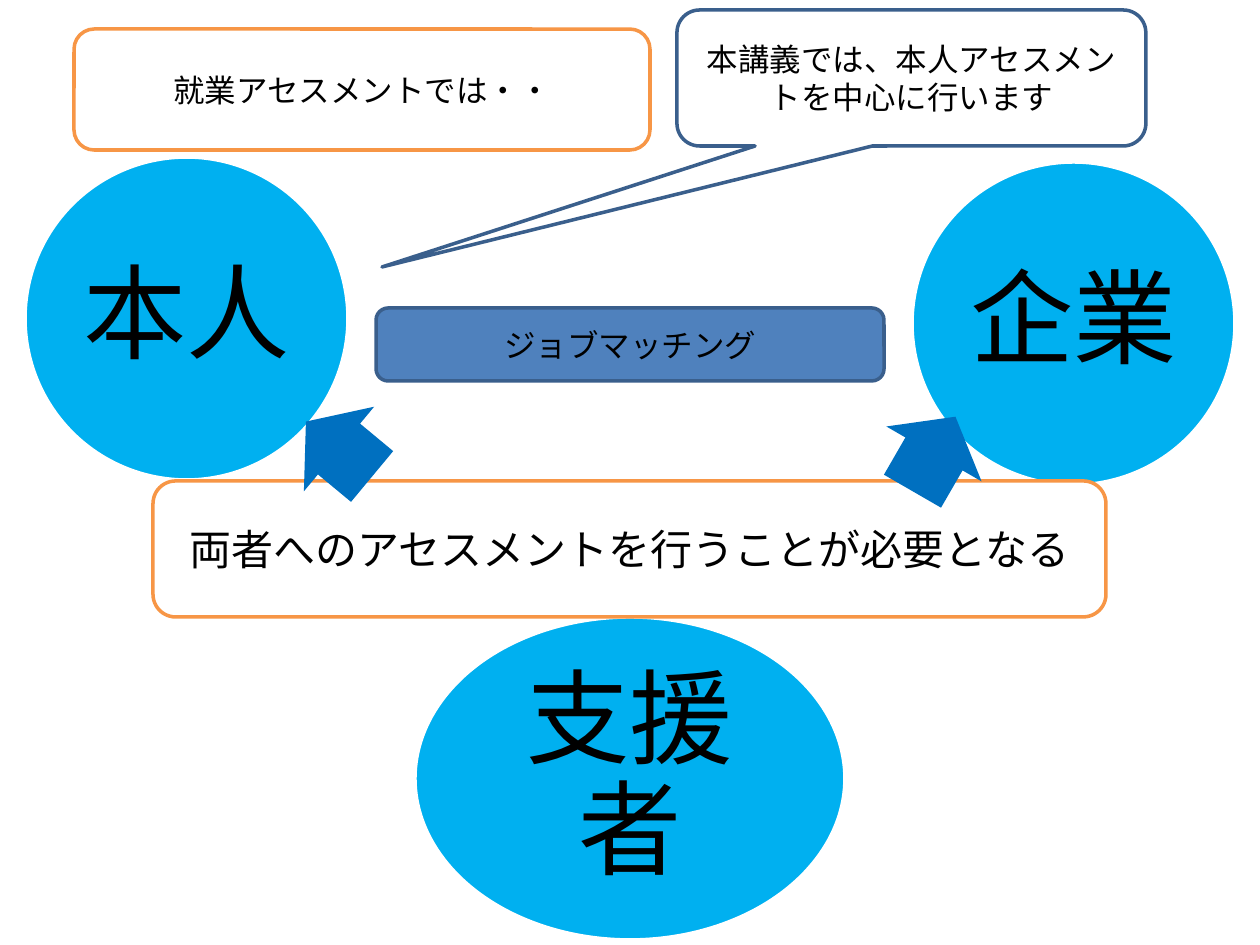
from lxml import etree
from pptx import Presentation
from pptx import util as u
from pptx.dml.color import RGBColor
from pptx.enum import shapes, text
from pptx.oxml.ns import qn

WHITE = RGBColor(0xFF, 0xFF, 0xFF)
BLACK = RGBColor(0, 0, 0)
SKY = RGBColor(0x00, 0xB0, 0xF0)
ARROW_BLUE = RGBColor(0x00, 0x70, 0xC0)
BAR_BLUE = RGBColor(0x4F, 0x81, 0xBD)
NAVY = RGBColor(0x3A, 0x5F, 0x8C)
ORANGE = RGBColor(0xF7, 0x96, 0x46)
JAPANESE = "Noto Sans CJK JP"
LATIN = "Calibri"
SCALE = 914400 / 126
Preset = shapes.MSO_SHAPE


def px(length):
    return u.Emu(round(length * SCALE))


class Diagram:
    def __init__(self, slide):
        self.slide = slide
        self.line_width = u.Pt(2)

    def shape(self, preset, box, fill=None, line=None):
        shape = self.slide.shapes.add_shape(preset, *map(px, box))
        shape.shadow.inherit = False
        if fill is None:
            shape.fill.background()
        else:
            shape.fill.solid()
            shape.fill.fore_color.rgb = fill
        if line is None:
            shape.line.fill.background()
        else:
            shape.line.color.rgb = line
            shape.line.width = self.line_width
        return shape

    def label(self, shape, wording, size, font=JAPANESE):
        frame = shape.text_frame
        frame.word_wrap = True
        frame.vertical_anchor = text.MSO_ANCHOR.MIDDLE
        paragraph = frame.paragraphs[0]
        paragraph.text = wording
        paragraph.alignment = text.PP_ALIGN.CENTER
        paragraph.font.size = u.Pt(size)
        paragraph.font.color.rgb = BLACK
        paragraph.font.name = font
        defaults = paragraph._p.pPr.find(qn("a:defRPr"))
        etree.SubElement(defaults, qn("a:ea"), typeface=JAPANESE)
        return paragraph

    def party(self, wording, box):
        shape = self.shape(Preset.OVAL, box, SKY, WHITE)
        paragraph = self.label(shape, wording, 59, LATIN)
        paragraph.line_spacing = 0.9
        frame = shape.text_frame
        frame.margin_left = frame.margin_right = px(10)
        frame.margin_top = frame.margin_bottom = px(10)

    def panel(self, wording, box, size, fill=WHITE, line=ORANGE):
        shape = self.shape(Preset.ROUNDED_RECTANGLE, box, fill, line)
        self.label(shape, wording, size)

    def arrow(self, left, top, rotation):
        shape = self.shape(Preset.RIGHT_ARROW, (left, top, 86, 110), ARROW_BLUE)
        shape.adjustments[0] = 0.6
        shape.adjustments[1] = 0.5
        shape.rotation = rotation

    def callout(self, wording, box, tail):
        shape = self.shape(Preset.ROUNDED_RECTANGULAR_CALLOUT, box, line=NAVY)
        left, top, width, height = box
        shape.adjustments[0] = (tail[0] - left) / width - 0.5
        shape.adjustments[1] = (tail[1] - top) / height - 0.5
        self.label(shape, wording, 18)


def main():
    presentation = Presentation()
    presentation.slide_width = px(1260)
    presentation.slide_height = px(945)
    diagram = Diagram(presentation.slides.add_slide(presentation.slide_layouts[6]))

    diagram.party("本人", (25, 157, 323, 323))
    diagram.party("企業", (912, 162, 323, 323))
    diagram.party("支援者", (415, 617, 430, 323))
    diagram.panel("両者へのアセスメントを行うことが必要となる", (153, 481, 953, 136), 24)
    diagram.panel("就業アセスメントでは・・", (74, 29, 576, 121), 18)
    diagram.arrow(296, 394, 219.7)
    diagram.arrow(891, 399, 300)
    diagram.callout("本講義では、本人アセスメントを中心に行います", (677, 10, 469, 136), (382, 267))
    diagram.panel("ジョブマッチング", (376, 308, 508, 73), 18, BAR_BLUE, NAVY)

    presentation.save("out.pptx")


if __name__ == "__main__":
    main()
